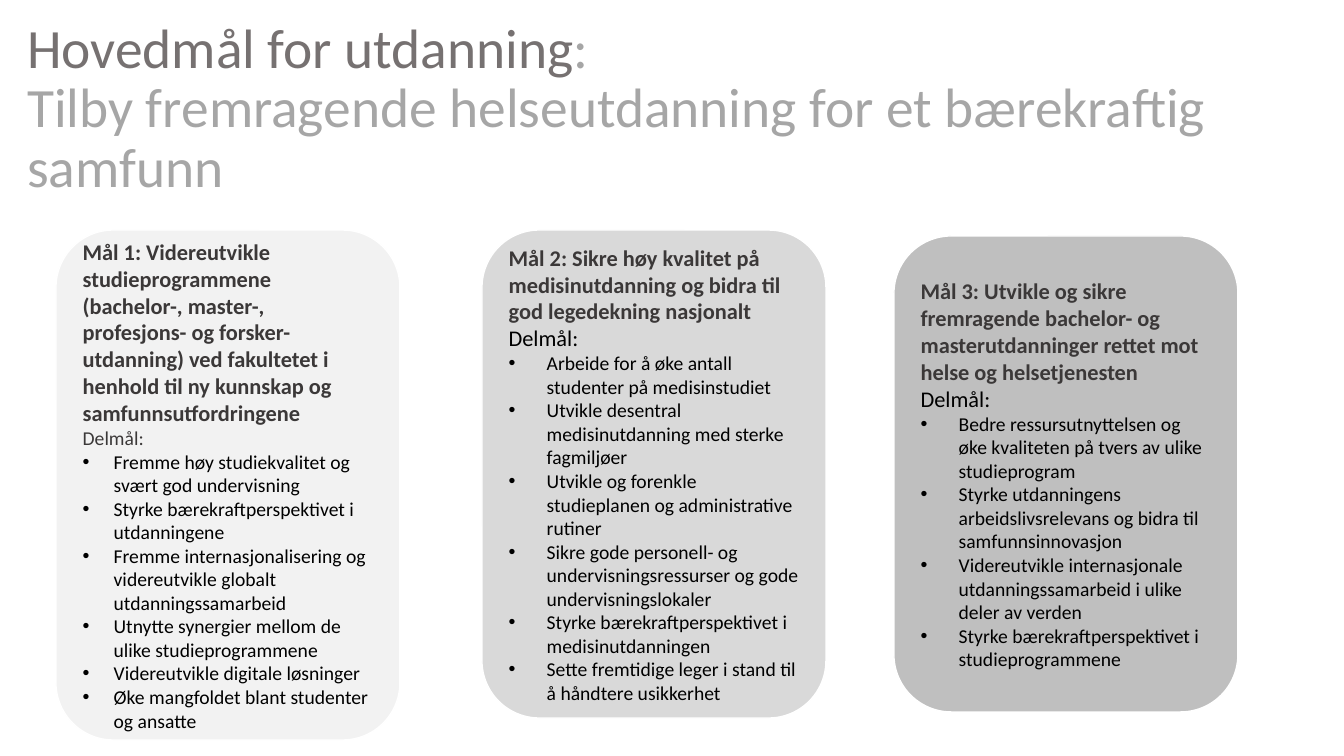
from dataclasses import dataclass
from typing import Any

from lxml.etree import SubElement
from pptx import Presentation
from pptx.dml.color import RGBColor
from pptx.enum.shapes import MSO_SHAPE
from pptx.enum.text import MSO_ANCHOR, MSO_AUTO_SIZE, PP_ALIGN
from pptx.oxml.ns import qn
from pptx.slide import Slide
from pptx.util import Emu, Pt


@dataclass(frozen=True)
class Theme:
    font: str = "Calibri"
    white: str = "FFFFFF"
    black: str = "000000"
    dark: str = "3B3838"
    title: str = "767171"
    muted: str = "A6A6A6"
    huge: float = 39.6
    large: int = 16
    small: int = 14


@dataclass(frozen=True)
class Card:
    left: int
    top: int
    height: int
    fill: str
    indent: int
    size: int
    ink: str
    goal: str
    items: tuple[str, ...]


THEME = Theme()
WIDTH, HEIGHT = 1344, 756
CARD_WIDTH = 344
LABEL = "Delmål:"

CARDS = (
    Card(56, 230, 510, "F2F2F2", 31, THEME.small, THEME.dark,
         "Mål 1: Videreutvikle studieprogrammene (bachelor-, master-, profesjons- "
         "og forsker-utdanning) ved fakultetet i henhold til ny kunnskap og "
         "samfunnsutfordringene",
         ("Fremme høy studiekvalitet og svært god undervisning",
          "Styrke bærekraftperspektivet i utdanningene",
          "Fremme internasjonalisering og videreutvikle globalt utdanningssamarbeid",
          "Utnytte synergier mellom de ulike studieprogrammene",
          "Videreutvikle digitale løsninger",
          "Øke mangfoldet blant studenter og ansatte")),
    Card(482, 230, 488, "D9D9D9", 38, THEME.large, THEME.black,
         "Mål 2: Sikre høy kvalitet på medisinutdanning og bidra til god "
         "legedekning nasjonalt",
         ("Arbeide for å øke antall studenter på medisinstudiet",
          "Utvikle desentral medisinutdanning med sterke fagmiljøer",
          "Utvikle og forenkle studieplanen og administrative rutiner",
          "Sikre gode personell- og undervisningsressurser og gode undervisningslokaler",
          "Styrke bærekraftperspektivet i medisinutdanningen",
          "Sette fremtidige leger i stand til å håndtere usikkerhet")),
    Card(894, 236, 476, "BFBFBF", 38, THEME.large, THEME.black,
         "Mål 3: Utvikle og sikre fremragende bachelor- og masterutdanninger "
         "rettet mot helse og helsetjenesten",
         ("Bedre ressursutnyttelsen og øke kvaliteten på tvers av ulike studieprogram",
          "Styrke utdanningens arbeidslivsrelevans og bidra til samfunnsinnovasjon",
          "Videreutvikle internasjonale utdanningssamarbeid i ulike deler av verden",
          "Styrke bærekraftperspektivet i studieprogrammene")),
)


def px(count: int) -> Emu:
    return Emu(round(count * 12192000 / WIDTH))


def apply(target: Any, values: dict[str, Any]) -> None:
    for name, value in values.items():
        setattr(target, name, value)


def write(para: Any, text: str, size: float, ink: str, bold: bool = False) -> None:
    run = para.add_run()
    run.text = text
    apply(run.font, {"name": THEME.font, "size": Pt(size), "bold": bold})
    run.font.color.rgb = RGBColor.from_string(ink)


def bullet(para: Any, indent: int) -> None:
    props = para._p.get_or_add_pPr()
    props.set("marL", str(px(indent)))
    props.set("indent", str(-px(indent)))
    SubElement(props, qn("a:buFont"), typeface="Arial")
    SubElement(props, qn("a:buChar"), char="•")


def draw_title(slide: Slide) -> None:
    title = slide.shapes.title
    apply(title, {"left": px(17), "top": px(20), "width": px(1221), "height": px(180)})
    frame = title.text_frame
    apply(frame, {"word_wrap": True, "auto_size": MSO_AUTO_SIZE.NONE,
                  "vertical_anchor": MSO_ANCHOR.MIDDLE})
    para = frame.paragraphs[0]
    apply(para, {"alignment": PP_ALIGN.LEFT, "line_spacing": 0.9})
    write(para, "Hovedmål for utdanning", THEME.huge, THEME.title)
    write(para, ":", THEME.huge, THEME.muted)
    para.add_line_break()
    write(para, "Tilby fremragende helseutdanning for et bærekraftig samfunn",
          THEME.huge, THEME.muted)


def draw_card(slide: Slide, card: Card) -> None:
    shape = slide.shapes.add_shape(
        MSO_SHAPE.ROUNDED_RECTANGLE,
        px(card.left), px(card.top), px(CARD_WIDTH), px(card.height))
    shape.shadow.inherit = False
    shape.fill.solid()
    shape.fill.fore_color.rgb = RGBColor.from_string(card.fill)
    shape.line.color.rgb = RGBColor.from_string(THEME.white)
    shape.line.width = Pt(1)
    frame = shape.text_frame
    apply(frame, {"word_wrap": True, "vertical_anchor": MSO_ANCHOR.MIDDLE})
    head = frame.paragraphs[0]
    write(head, card.goal, THEME.large, THEME.dark, True)
    label = frame.add_paragraph()
    write(label, LABEL, card.size, card.ink)
    for item in card.items:
        para = frame.add_paragraph()
        bullet(para, card.indent)
        write(para, item, THEME.small, THEME.black)
    for para in frame.paragraphs:
        para.alignment = PP_ALIGN.LEFT


def main() -> None:
    deck = Presentation()
    apply(deck, {"slide_width": px(WIDTH), "slide_height": px(HEIGHT)})
    slide = deck.slides.add_slide(deck.slide_layouts.get_by_name("Title Only"))
    draw_title(slide)
    for card in CARDS:
        draw_card(slide, card)
    deck.save("out.pptx")


if __name__ == "__main__":
    main()
